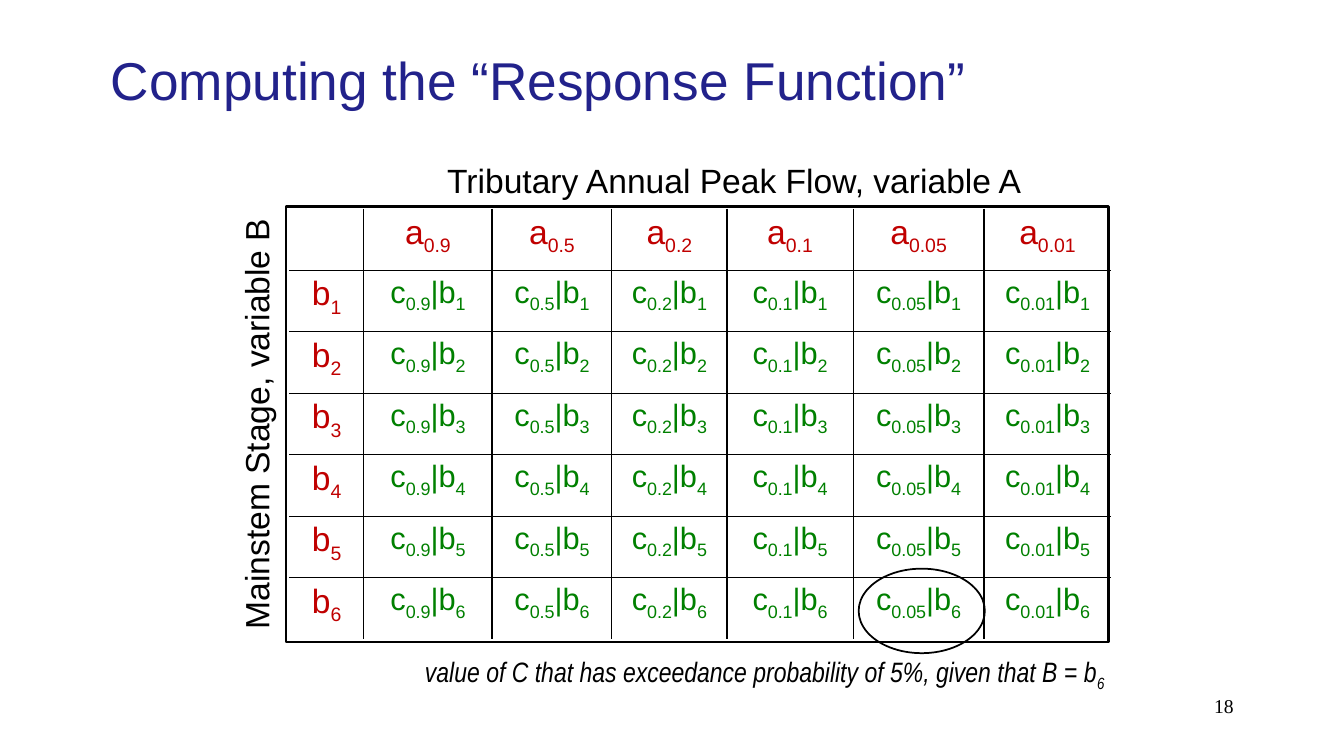
"""Build the response function slide with its conditional probability table."""
import pptx
import pptx.dml.color
import pptx.enum.shapes
import pptx.enum.text
import pptx.oxml
import pptx.oxml.ns
import pptx.util
from pptx.util import Cm

BLACK = pptx.dml.color.RGBColor(0x00, 0x00, 0x00)
RED = pptx.dml.color.RGBColor(0xC0, 0x00, 0x00)
GREEN = pptx.dml.color.RGBColor(0x00, 0x80, 0x00)
NAVY = pptx.dml.color.RGBColor(0x22, 0x22, 0x8B)

ALIGN = pptx.enum.text.PP_ALIGN
SHAPES = pptx.enum.shapes.MSO_SHAPE
PROBABILITIES = ["0.9", "0.5", "0.2", "0.1", "0.05", "0.01"]
STAGES = ["1", "2", "3", "4", "5", "6"]
COLUMN_WIDTHS = [1.88, 3.23, 3.02, 2.9, 3.18, 3.3, 3.2]
ROW_HEIGHT = 1.55


def write(frame, parts, size, color, name="Arial", align=ALIGN.LEFT, italic=False):
    """Write parts into a frame, with every second part as a subscript."""
    para = frame.paragraphs[0]
    para.alignment = align
    values = {"size": pptx.util.Pt(size), "name": name, "italic": italic}
    for index, text in enumerate(parts):
        span = para.add_run()
        span.text = text
        for key, value in values.items():
            setattr(span.font, key, value)
        span.font.color.rgb = color
        if index % 2:
            span._r.get_or_add_rPr().set("baseline", "-25000")


def add_label(page, place, parts, size, rotation=0, **style):
    """Add a text box with black text."""
    box = page.shapes.add_textbox(*map(Cm, place))
    box.rotation = rotation
    box.text_frame.word_wrap = True
    write(box.text_frame, parts, size, BLACK, **style)


def add_outline(page, kind, place, weight):
    """Add an unfilled shape with a black line."""
    shape = page.shapes.add_shape(kind, *map(Cm, place))
    shape.shadow.inherit = False
    shape.fill.background()
    shape.line.color.rgb = BLACK
    shape.line.width = pptx.util.Pt(weight)


def set_borders(cell, edges):
    """Draw the named edges of a cell in black and clear the others."""
    properties = cell._tc.get_or_add_tcPr()
    for index, edge in enumerate("LRTB"):
        fill = "<a:noFill/>"
        if edge in edges:
            fill = f'<a:solidFill><a:srgbClr val="{BLACK}"/></a:solidFill>'
        line = f'<a:ln{edge} {pptx.oxml.ns.nsdecls("a")} w="12700">{fill}</a:ln{edge}>'
        properties.insert(index, pptx.oxml.parse_xml(line))


def cell_parts(row, column):
    """Return the text parts for one cell of the response table."""
    if row == 0:
        return ["a", PROBABILITIES[column - 1]] if column else []
    stage = STAGES[row - 1]
    if column == 0:
        return ["b", stage]
    return ["c", PROBABILITIES[column - 1], "|b", stage]


def add_response_table(page):
    """Add the table of C for each flow and stage, with inner lines only."""
    rows, columns = len(STAGES) + 1, len(COLUMN_WIDTHS)
    size = Cm(sum(COLUMN_WIDTHS)), Cm(ROW_HEIGHT * rows)
    table = page.shapes.add_table(rows, columns, Cm(7.29), Cm(5.26), *size).table
    table.first_row = table.horz_banding = False
    for column, width in enumerate(COLUMN_WIDTHS):
        table.columns[column].width = Cm(width)
    for row in range(rows):
        table.rows[row].height = Cm(ROW_HEIGHT)
        for column in range(columns):
            cell = table.cell(row, column)
            cell.fill.background()
            inner = {"L": column > 0, "R": column < columns - 1,
                     "T": row > 0, "B": row < rows - 1}
            set_borders(cell, [edge for edge, drawn in inner.items() if drawn])
            heading = row == 0 or column == 0
            write(cell.text_frame, cell_parts(row, column), 24 if heading else 22,
                  RED if heading else GREEN, align=ALIGN.CENTER)


def set_title(page, text):
    """Place and format the title placeholder."""
    title = page.shapes.title
    place = {"left": 2.54, "top": 0.41, "width": 28.78, "height": 3.18}
    for key, value in place.items():
        setattr(title, key, Cm(value))
    frame = title.text_frame
    frame.auto_size = pptx.enum.text.MSO_AUTO_SIZE.NONE
    frame.vertical_anchor = pptx.enum.text.MSO_ANCHOR.MIDDLE
    write(frame, [text], 38, NAVY)


def main():
    """Build and save the deck."""
    deck = pptx.Presentation()
    deck.slide_width, deck.slide_height = Cm(33.87), Cm(19.05)
    page = deck.slides.add_slide(deck.slide_layouts[5])
    set_title(page, "Computing the “Response Function”")
    add_outline(page, SHAPES.RECTANGLE, (7.21, 5.21, 20.73, 10.97), 1.75)
    add_response_table(page)
    add_label(page, (11.02, 3.91, 15.19, 1.3),
              ["Tributary Annual Peak Flow, variable A"], 24)
    add_label(page, (0.23, 9.25, 12.45, 1.27),
              ["Mainstem Stage, variable B"], 24, rotation=270)
    add_label(page, (10.46, 16.36, 17.98, 1.09),
              ["value of C that has exceedance probability of 5%, given that B = b", "6"],
              20, name="Arial Narrow", italic=True)
    add_outline(page, SHAPES.OVAL, (21.64, 14.33, 3.18, 2.13), 1.25)
    add_label(page, (24.28, 17.35, 7.06, 1.27), ["18"], 14,
              name="Times New Roman", align=ALIGN.RIGHT)
    deck.save("out.pptx")


if __name__ == "__main__":
    main()
